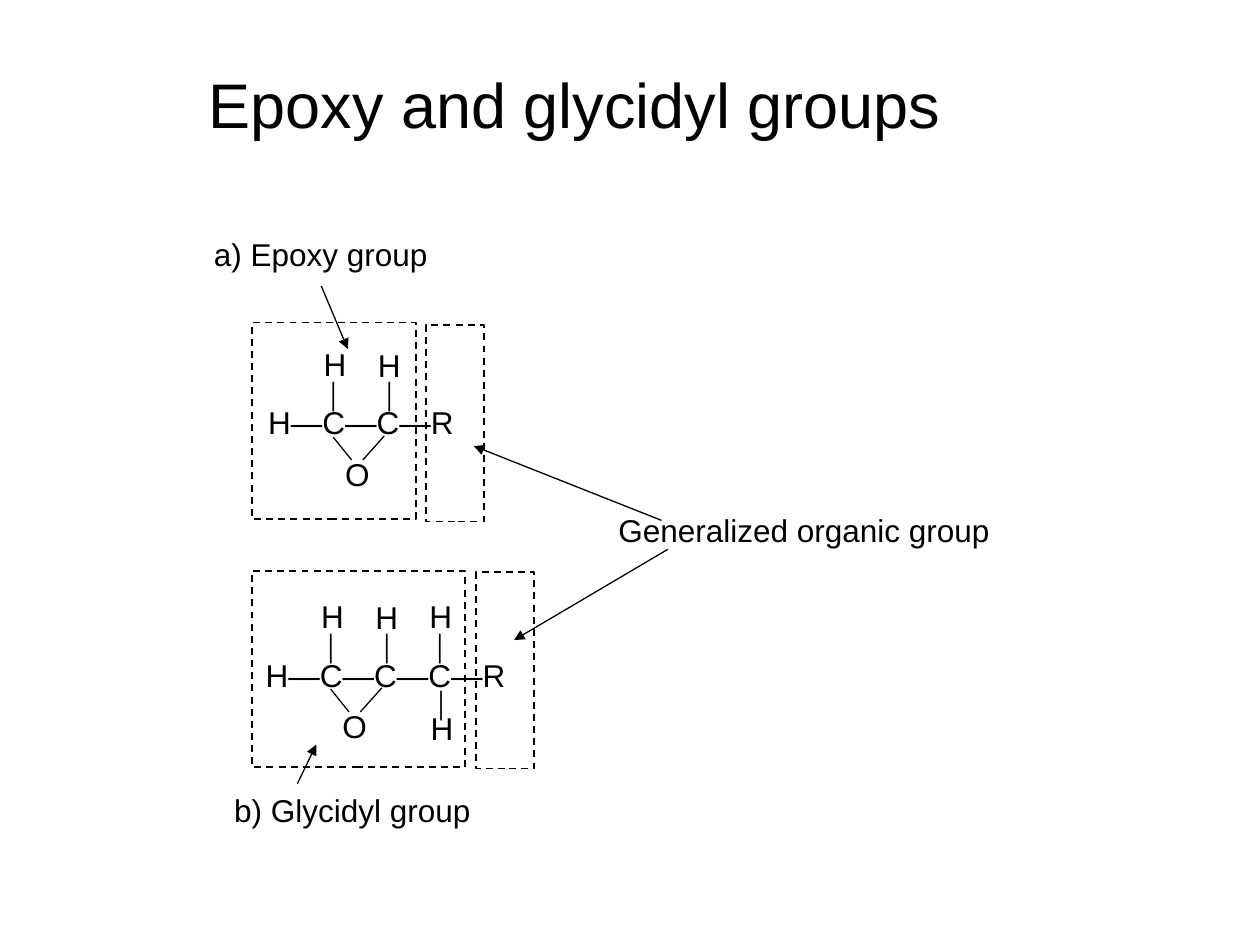
from lxml import etree
from pptx import Presentation
from pptx.dml.color import RGBColor
from pptx.enum.dml import MSO_LINE
from pptx.enum.shapes import MSO_CONNECTOR, MSO_SHAPE
from pptx.enum.text import MSO_AUTO_SIZE
from pptx.oxml.ns import qn
from pptx.util import Inches, Pt

RECT = MSO_SHAPE.RECTANGLE
STRAIGHT = MSO_CONNECTOR.STRAIGHT
DASH = MSO_LINE.DASH
FIT = MSO_AUTO_SIZE.SHAPE_TO_FIT_TEXT
COLORS = {"ink": "000000"}
INK = RGBColor.from_string(COLORS["ink"])

prs = Presentation()
prs.slide_width, prs.slide_height = Inches(10), Inches(7.5)
s = prs.slides.add_slide(prs.slide_layouts[6])

# Grid of 100 columns by 75 rows
COL = prs.slide_width / 100
ROW = prs.slide_height / 75


def add_text(text, x, y, w, h=4, size=18):
    sp = s.shapes.add_textbox(int(x * COL), int(y * ROW), int(w * COL), int(h * ROW))
    tf = sp.text_frame
    tf.word_wrap = False
    tf.auto_size = FIT
    p = tf.paragraphs[0]
    p.text = text
    p.font.name = "Arial"
    p.font.size = Pt(size)
    p.font.color.rgb = INK


def add_line(x1, y1, x2, y2, arrow=False):
    sp = s.shapes.add_connector(STRAIGHT, int(x1 * COL), int(y1 * ROW),
                                int(x2 * COL), int(y2 * ROW))
    sp.line.color.rgb = INK
    sp.line.width = Pt(0.75)
    if arrow:
        etree.SubElement(sp.line._get_or_add_ln(), qn("a:tailEnd"), type="triangle")
    etree.SubElement(sp._element.spPr, qn("a:effectLst"))


# Title
add_text("Epoxy and glycidyl groups", 15.6, 4.7, 60.1, 7, 36)

# Molecules: both start with the same epoxy ring
for chain, width, x, y in [("H―C―C―R", 16.7, 20.3, 31.5),
                           ("H―C―C―C―R", 21, 20.1, 51.6)]:
    add_text(chain, x, y, width)
    top = y - 4.6 if y < 50 else y - 4.7
    for dx, dy in [(4.4, 0), (8.7, 0.1)]:
        add_text("H", x + dx, top + dy, 3.8)
    for dx in (4.65, 9.1):
        add_text("│", x + dx, top + 2.8, 3.2, 3.3, 14)
    add_line(x + 6.15, top + 7.8, x + 7.6, top + 9.6)
    add_line(x + 10.2, top + 7.7, x + 8.5, top + 9.6)
    add_text("O", x + 6.1, top + 8.7, 4)

# Extra CH2 of the glycidyl group
for x, bond_y, h_y in [(33.1, 49.7, 46.9), (33.2, 54.2, 55.8)]:
    add_text("│", x + 0.3, bond_y, 3.2, 3.3, 14)
    add_text("H", x, h_y, 3.8)

# Dashed frames around the groups
for x, y, w in [(20, 25.6, 13), (33.8, 25.8, 4.6),
                (20, 45.3, 16.9), (37.8, 45.4, 4.6)]:
    sp = s.shapes.add_shape(RECT, int(x * COL), int(y * ROW),
                            int(w * COL), int(15.6 * ROW))
    sp.shadow.inherit = False
    sp.fill.background()
    sp.line.color.rgb = INK
    sp.line.width = Pt(1)
    sp.line.dash_style = DASH

# Labels
for text, x, y, w in [("a) Epoxy group", 16, 18.2, 19),
                      ("b) Glycidyl group", 17.6, 62.3, 20.8),
                      ("Generalized organic group", 48.1, 40.1, 31.5)]:
    add_text(text, x, y, w)

# Arrows from the labels to the groups
for ends in [(52.5, 41.3, 37.6, 35.4), (53, 43.6, 40.8, 50.8),
             (25.5, 22.7, 27.6, 27.7), (23.6, 62.2, 25.1, 59.1)]:
    add_line(*ends, arrow=True)

prs.save("out.pptx")
